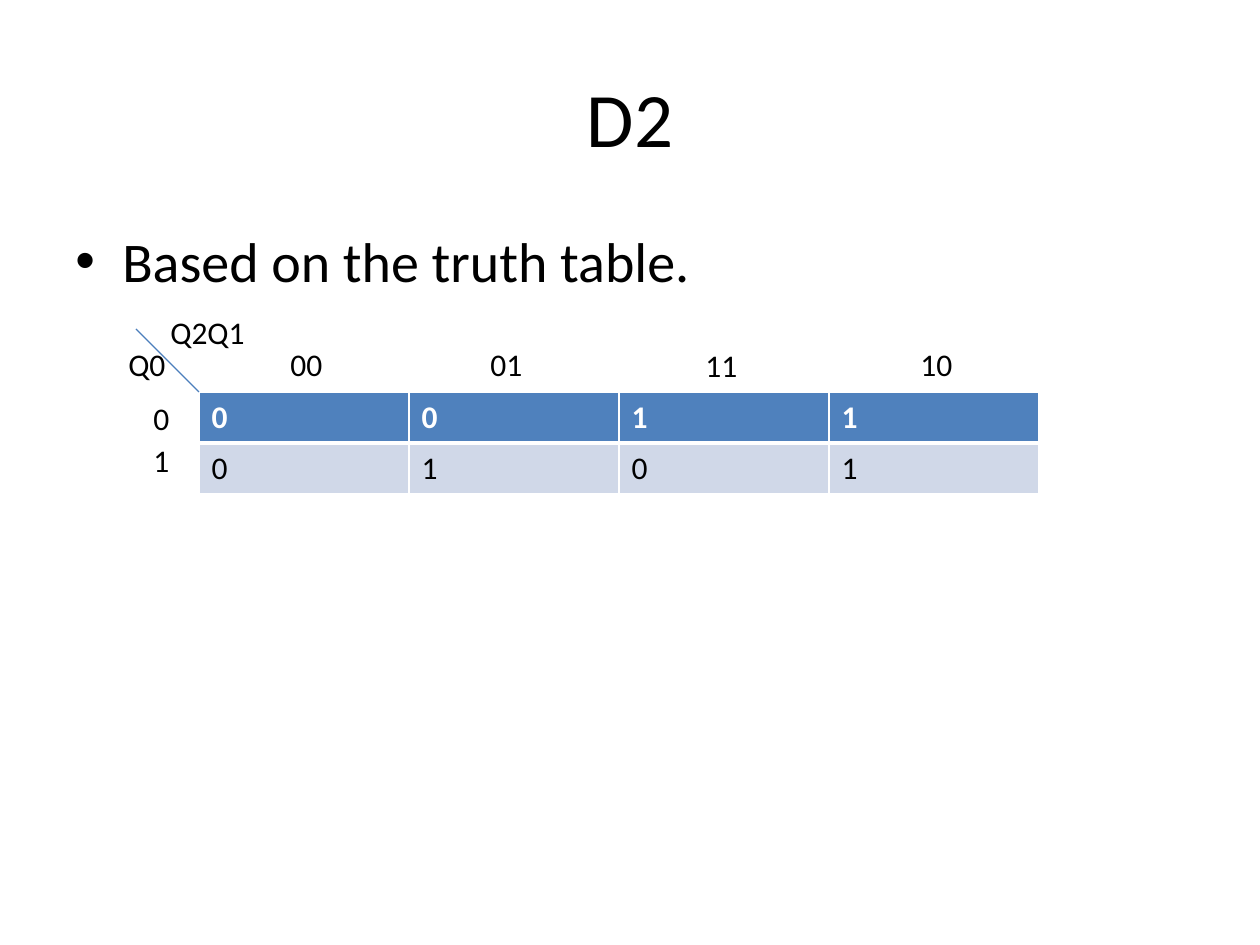
import dataclasses

import lxml.etree
import pptx
import pptx.dml.color
import pptx.enum.shapes
import pptx.enum.text
import pptx.oxml.ns
import pptx.util

PX_PER_INCH = 126


@dataclasses.dataclass(frozen=True)
class Theme:
    font: str = "Calibri"
    title_size: int = 44
    body_size: int = 32
    map_size: int = 18
    text: str = "000000"
    header_text: str = "FFFFFF"
    header_fill: str = "4F81BD"
    row_fill: str = "D0D8E8"
    border: str = "FFFFFF"
    diagonal: str = "4B7EBC"


THEME = Theme()


def px(length):
    return pptx.util.Emu(round(length * 914400 / PX_PER_INCH))


def rgb(value):
    return pptx.dml.color.RGBColor.from_string(value)


def add_child(parent, tag, **attributes):
    return lxml.etree.SubElement(parent, pptx.oxml.ns.qn(tag), attributes)


def style_paragraph(paragraph, size, color=THEME.text, bold=False):
    font = paragraph.font
    font.name = THEME.font
    font.size = pptx.util.Pt(size)
    font.color.rgb = rgb(color)
    font.bold = bold


def add_text(slide, text, left, top, width, height, size):
    shape = slide.shapes.add_textbox(px(left), px(top), px(width), px(height))
    shape.text_frame.word_wrap = True
    paragraph = shape.text_frame.paragraphs[0]
    paragraph.text = text
    style_paragraph(paragraph, size)
    return shape.text_frame


def add_title(slide, text):
    frame = add_text(slide, text, 63, 38, 1134, 158, THEME.title_size)
    frame.vertical_anchor = pptx.enum.text.MSO_ANCHOR.MIDDLE
    frame.paragraphs[0].alignment = pptx.enum.text.PP_ALIGN.CENTER


def add_bullet(slide, text):
    frame = add_text(slide, text, 63, 220, 1134, 84, THEME.body_size)
    paragraph = frame.paragraphs[0]
    paragraph.space_before = pptx.util.Pt(6.4)
    properties = paragraph._p.get_or_add_pPr()
    indent = px(47)
    properties.set("marL", str(indent))
    properties.set("indent", str(-indent))
    bullet_font = lxml.etree.Element(pptx.oxml.ns.qn("a:buFont"), typeface="Arial")
    bullet = lxml.etree.Element(pptx.oxml.ns.qn("a:buChar"), char="•")
    properties.find(pptx.oxml.ns.qn("a:spcBef")).addnext(bullet_font)
    bullet_font.addnext(bullet)


def add_label(slide, text, left, top, width):
    frame = add_text(slide, text, left, top, width, 50, THEME.map_size)
    frame.word_wrap = False
    frame.auto_size = pptx.enum.text.MSO_AUTO_SIZE.SHAPE_TO_FIT_TEXT


def set_borders(cell, widths):
    properties = cell._tc.get_or_add_tcPr()
    for index, (side, width) in enumerate(widths.items()):
        line = lxml.etree.Element(
            pptx.oxml.ns.qn(f"a:ln{side}"), w=str(pptx.util.Pt(width))
        )
        fill = add_child(line, "a:solidFill")
        add_child(fill, "a:srgbClr", val=THEME.border)
        properties.insert(index, line)


def add_map(slide, rows):
    shape = slide.shapes.add_table(
        len(rows), len(rows[0]), px(199), px(392), px(840), px(102)
    )
    table = shape.table
    table.horz_banding = False
    for row_index, values in enumerate(rows):
        header = row_index == 0
        for column_index, value in enumerate(values):
            cell = table.cell(row_index, column_index)
            cell.text = value
            cell.fill.solid()
            cell.fill.fore_color.rgb = rgb(
                THEME.header_fill if header else THEME.row_fill
            )
            style_paragraph(
                cell.text_frame.paragraphs[0],
                THEME.map_size,
                THEME.header_text if header else THEME.text,
                header,
            )
            top, bottom = (1, 3) if header else (3, 1)
            set_borders(cell, {"L": 1, "R": 1, "T": top, "B": bottom})


def add_diagonal(slide):
    line = slide.shapes.add_connector(
        pptx.enum.shapes.MSO_CONNECTOR.STRAIGHT, px(136), px(329), px(199), px(392)
    )
    line.line.color.rgb = rgb(THEME.diagonal)
    line.line.width = pptx.util.Pt(0.75)
    add_child(line._element.spPr, "a:effectLst")


def main():
    presentation = pptx.Presentation()
    presentation.slide_width = px(1260)
    presentation.slide_height = px(945)
    slide = presentation.slides.add_slide(presentation.slide_layouts[6])

    add_title(slide, "D2")
    add_bullet(slide, "Based on the truth table.")
    add_map(slide, [["0", "0", "1", "1"], ["0", "1", "0", "1"]])
    labels = [
        ("00", 278, 339, 58),
        ("01", 478, 339, 58),
        ("11", 693, 340, 58),
        ("10", 908, 339, 58),
        ("0", 141, 393, 42),
        ("1", 141, 435, 42),
        ("Q2Q1", 158, 307, 101),
        ("Q0", 116, 339, 63),
    ]
    for label in labels:
        add_label(slide, *label)
    add_diagonal(slide)
    presentation.save("out.pptx")


if __name__ == "__main__":
    main()
